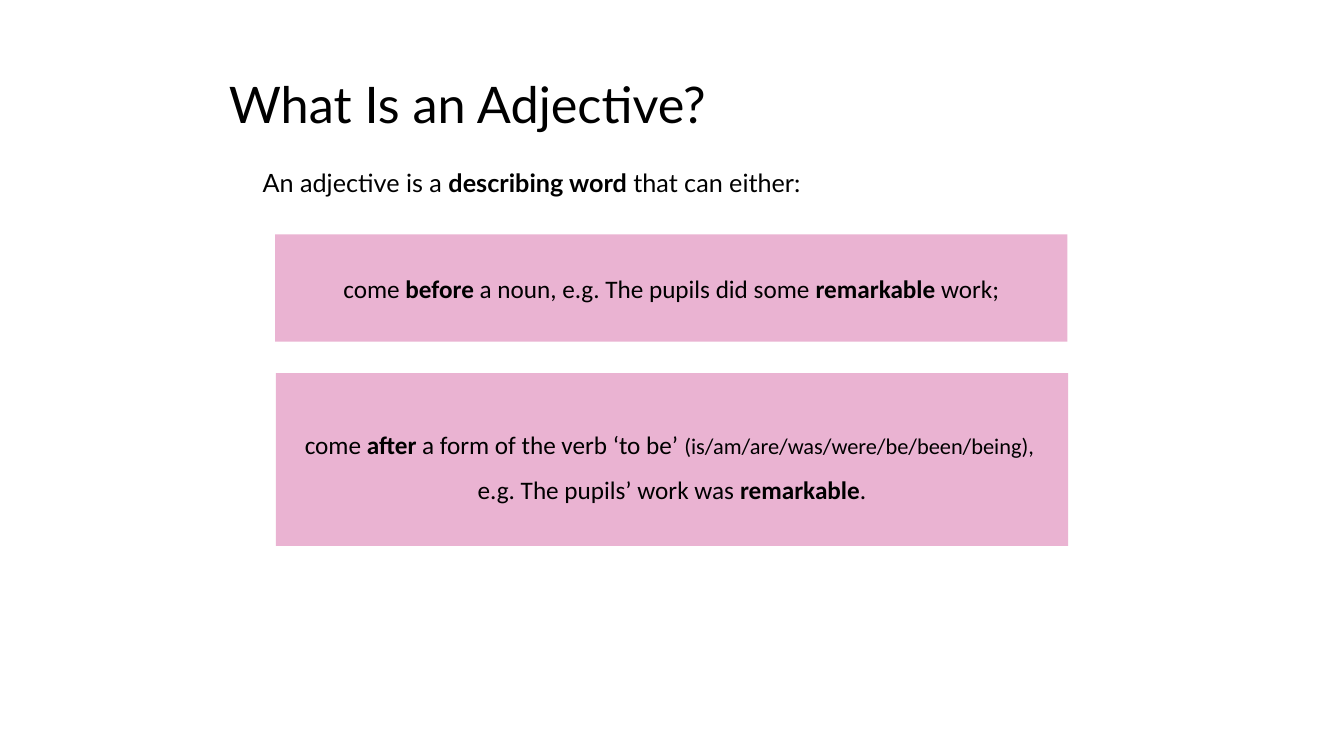
from pptx import Presentation
from pptx.dml.color import RGBColor
from pptx.enum.shapes import MSO_SHAPE
from pptx.enum.text import MSO_ANCHOR, PP_ALIGN
from pptx.util import Pt

BLACK = RGBColor(0, 0, 0)
PINK = RGBColor(0xEA, 0xB3, 0xD2)

# Content: each line is a list of (text, bold, size) runs
TITLE = [[("What Is an Adjective?", False, 36)]]
INTRO = [[("An adjective is a ", False, 18), ("describing word", True, 18),
          (" that can either:", False, 18)]]
BEFORE = [[("come ", False, 18), ("before", True, 18),
           (" a noun, e.g. The pupils did some ", False, 18),
           ("remarkable", True, 18), (" work;", False, 18)]]
AFTER = [[("come ", False, 18), ("after", True, 18),
          (" a form of the verb ‘to be’ ", False, 18),
          ("(is/am/are/was/were/be/been/being), ", False, 16)],
         [("e.g. The pupils’ work was ", False, 18),
          ("remarkable", True, 18), (".", False, 18)]]

# Pink cards: lines, left, top, height, line spacing
CARDS = [(BEFORE, 196.5, 167.5, 76.5, 1), (AFTER, 197, 266.5, 123.5, 1.5)]
CARD_W = 566


def write(shape, lines, font="Calibri", align=PP_ALIGN.CENTER,
          anchor=MSO_ANCHOR.MIDDLE, space=1):
    frame = shape.text_frame
    frame.word_wrap = True
    frame.vertical_anchor = anchor
    for i, line in enumerate(lines):
        para = frame.add_paragraph() if i else frame.paragraphs[0]
        para.alignment = align
        para.line_spacing = space
        for text, bold, size in line:
            run = para.add_run()
            run.text = text
            run.font.name = font
            run.font.size = Pt(size)
            run.font.bold = bold
            run.font.color.rgb = BLACK


deck = Presentation()
deck.slide_width, deck.slide_height = Pt(960), Pt(540)
slide = deck.slides.add_slide(deck.slide_layouts[5])

# Title
title = slide.shapes.title
title.left, title.top = Pt(156.25), Pt(37.5)
title.width, title.height = Pt(647.25), Pt(78.5)
write(title, TITLE, font="Lato", align=PP_ALIGN.LEFT, space=0.9)

# Introduction
intro = slide.shapes.add_textbox(Pt(166.25), Pt(116), Pt(427), Pt(29))
write(intro, INTRO, font="Lato", anchor=MSO_ANCHOR.TOP)

# Cards
for lines, left, top, height, space in CARDS:
    card = slide.shapes.add_shape(MSO_SHAPE.RECTANGLE, Pt(left), Pt(top),
                                  Pt(CARD_W), Pt(height))
    card.shadow.inherit = False
    card.fill.solid()
    card.fill.fore_color.rgb = PINK
    card.line.fill.background()
    write(card, lines, space=space)

deck.save("out.pptx")
